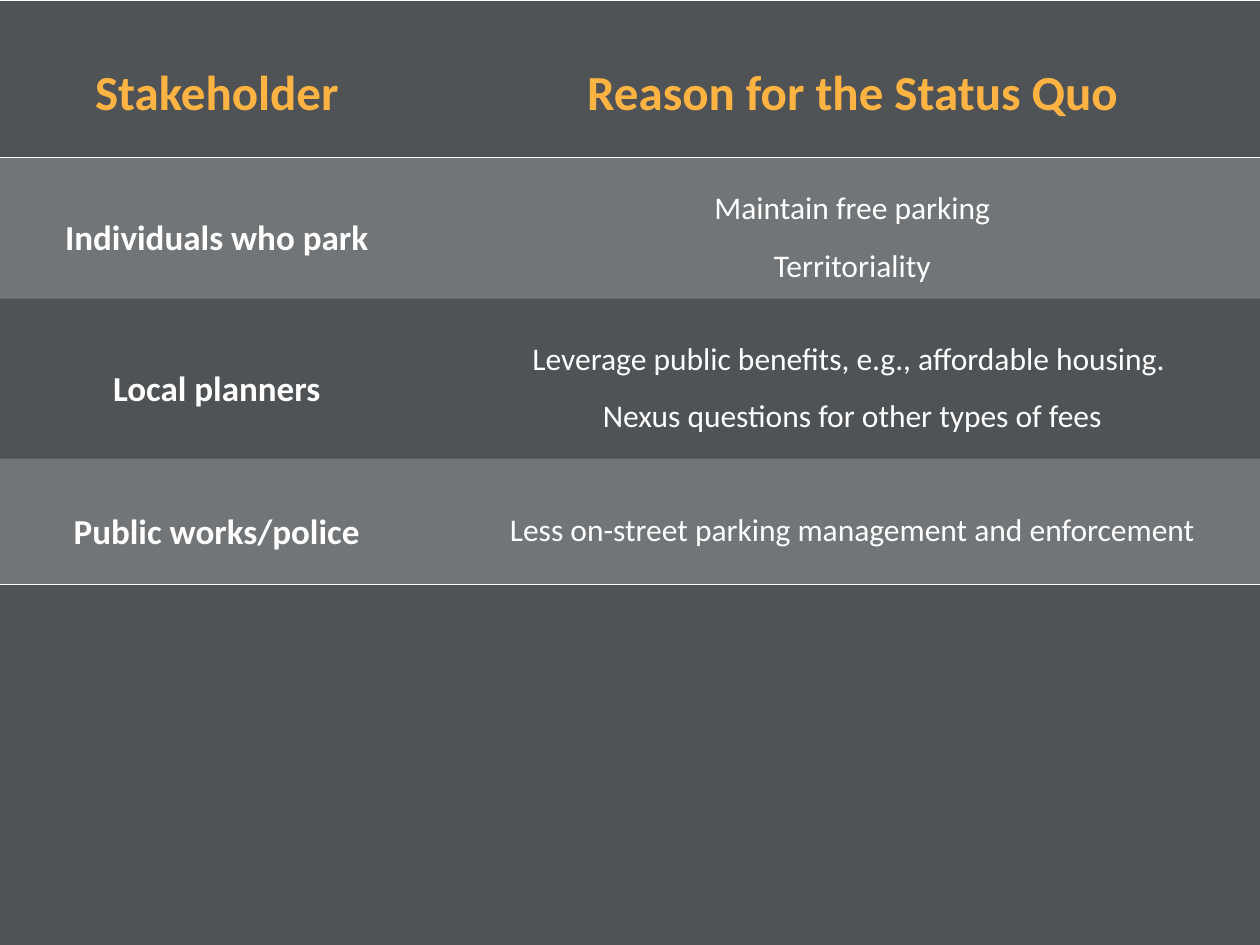
from lxml.etree import SubElement
from pptx import Presentation
from pptx.dml.color import RGBColor
from pptx.enum.text import MSO_ANCHOR, PP_ALIGN
from pptx.oxml import parse_xml
from pptx.oxml.ns import nsdecls, qn
from pptx.util import Inches, Pt

BACKGROUND, WHITE, ORANGE = "4F5355", "FFFFFF", "FFB343"
FONT = "Calibri"
NO_STYLE = "{2D5ABB26-0587-4C30-8999-92F81FD0307C}"
COLUMNS = [3.6, 6.49]
HEIGHTS = [1.25, 1.12, 1.27, 1]
ROWS = [
    ("Stakeholder", ["Reason for the Status Quo"]),
    ("Individuals who park", ["Maintain free parking", "Territoriality"]),
    ("Local planners", ["Leverage public benefits, e.g., affordable housing. ",
                        "Nexus questions for other types of fees"]),
    ("Public works/police", ["Less on-street parking management and enforcement"]),
]
RULES = {0: ["lnT", "lnB"], len(ROWS) - 1: ["lnB"]}


def rgb(value):
    return RGBColor.from_string(value)


def write(cell, lines, size, color, bold, inset):
    cell.vertical_anchor = MSO_ANCHOR.MIDDLE
    cell.margin_left, cell.margin_top, cell.margin_right, cell.margin_bottom = (
        Inches(m) for m in inset * 2)
    tf = cell.text_frame
    for i, line in enumerate(lines):
        p = tf.add_paragraph() if i else tf.paragraphs[0]
        p.alignment = PP_ALIGN.CENTER
        p.line_spacing = 1.5
        r = p.add_run()
        r.text = line
        r.font.name, r.font.size, r.font.bold = FONT, Pt(size), bold
        r.font.color.rgb = rgb(color)


def paint(cell, banded, sides):
    tc_pr = cell._tc.get_or_add_tcPr()
    if banded:
        cell.fill.solid()
        cell.fill.fore_color.rgb = rgb(WHITE)
        SubElement(tc_pr.find(".//" + qn("a:srgbClr")), qn("a:alpha"), val="20000")
    else:
        cell.fill.background()
    for i, side in enumerate(sides):
        tc_pr.insert(i, parse_xml(
            f'<a:{side} {nsdecls("a")} w="{Pt(1)}"><a:solidFill>'
            f'<a:srgbClr val="{WHITE}"/></a:solidFill></a:{side}>'))


def main():
    """Build the stakeholder table slide."""
    prs = Presentation()
    prs.slide_width, prs.slide_height = Inches(10), Inches(7.5)
    s = prs.slides.add_slide(prs.slide_layouts[6])
    s.background.fill.solid()
    s.background.fill.fore_color.rgb = rgb(BACKGROUND)

    table = s.shapes.add_table(
        len(ROWS), len(COLUMNS), Inches(-0.08), 0,
        Inches(sum(COLUMNS)), Inches(sum(HEIGHTS))).table
    table._tbl.tblPr.find(qn("a:tableStyleId")).text = NO_STYLE
    for column, width in zip(table.columns, COLUMNS):
        column.width = Inches(width)

    for i, (stakeholder, reasons) in enumerate(ROWS):
        table.rows[i].height = Inches(HEIGHTS[i])
        name, reason = table.cell(i, 0), table.cell(i, 1)
        if i == 0:
            for cell, lines in ((name, [stakeholder]), (reason, reasons)):
                write(cell, lines, 28, ORANGE, True, (0.05, 0))
        else:
            write(name, [stakeholder], 20, WHITE, True, (0.05, 0))
            write(reason, reasons, 18, WHITE, False, (0.1, 0.1))
        for cell in (name, reason):
            paint(cell, i % 2 == 1, RULES.get(i, []))

    prs.save("out.pptx")


if __name__ == "__main__":
    main()
